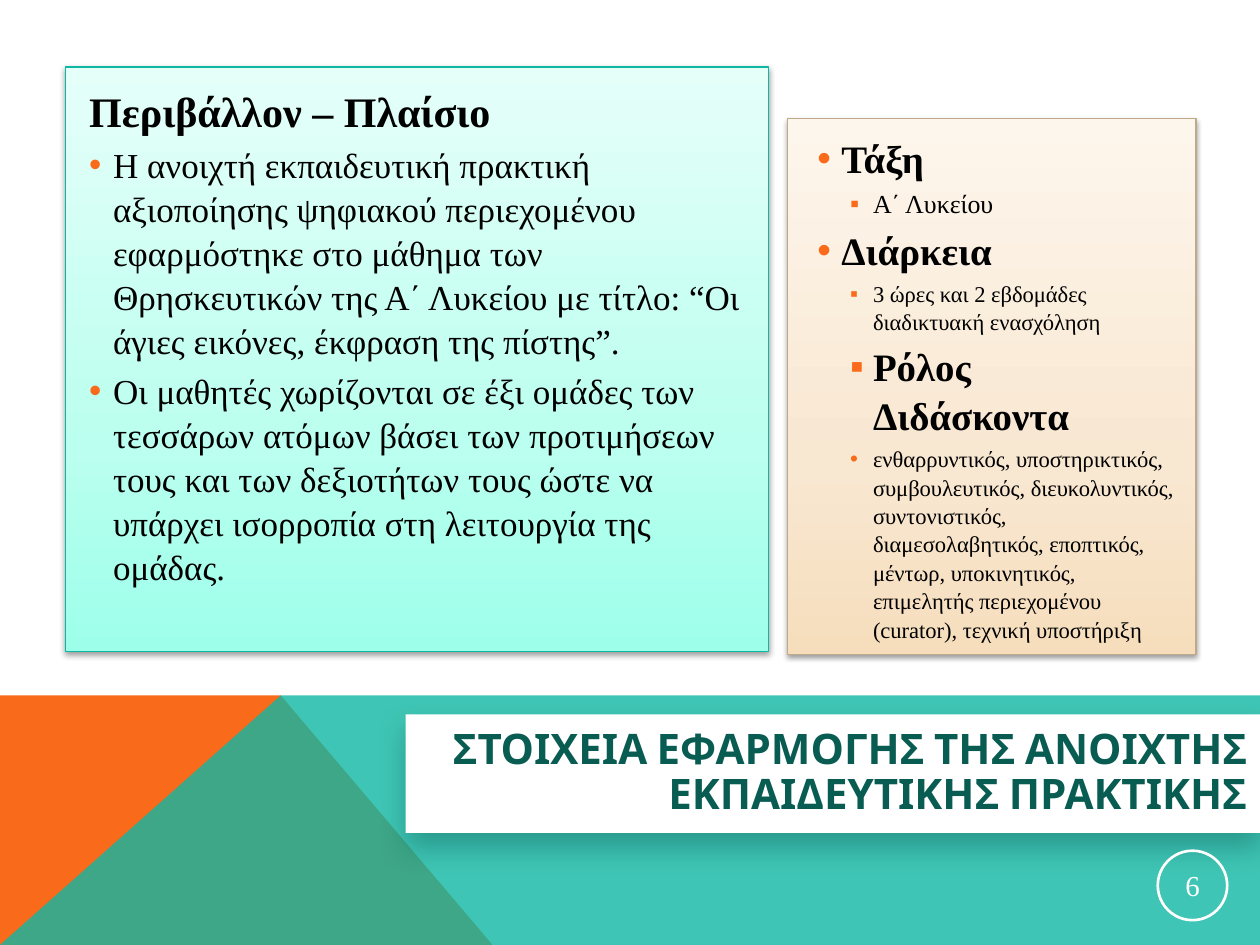
from lxml import etree
from pptx import Presentation
from pptx.dml.color import RGBColor
from pptx.enum.shapes import MSO_SHAPE
from pptx.enum.text import MSO_ANCHOR, PP_ALIGN
from pptx.oxml.ns import qn
from pptx.util import Cm, Pt

RECTANGLE, OVAL = MSO_SHAPE.RECTANGLE, MSO_SHAPE.OVAL
MIDDLE = MSO_ANCHOR.MIDDLE
CENTER, RIGHT = PP_ALIGN.CENTER, PP_ALIGN.RIGHT

# ---- content: (kind, text, size key) ----
TITLE = "ΣΤΟΙΧΕΙΑ ΕΦΑΡΜΟΓΗΣ ΤΗΣ ΑΝΟΙΧΤΗΣ ΕΚΠΑΙΔΕΥΤΙΚΗΣ ΠΡΑΚΤΙΚΗΣ"
PAGE_NUMBER = "6"
CONTEXT = [
    ("heading", "Περιβάλλον – Πλαίσιο", "heading"),
    ("point", "Η ανοιχτή εκπαιδευτική πρακτική αξιοποίησης ψηφιακού περιεχομένου "
     "εφαρμόστηκε στο μάθημα των Θρησκευτικών της Α΄ Λυκείου με τίτλο: "
     "“Οι άγιες εικόνες, έκφραση της πίστης”.", "body"),
    ("point", "Οι μαθητές χωρίζονται σε έξι ομάδες των τεσσάρων ατόμων βάσει των "
     "προτιμήσεων τους και των δεξιοτήτων τους ώστε να υπάρχει ισορροπία στη "
     "λειτουργία της ομάδας.", "body"),
]
DETAILS = [
    ("point", "Τάξη", "topic"),
    ("square", "Α΄ Λυκείου", "grade"),
    ("point", "Διάρκεια", "topic"),
    ("square", "3 ώρες και 2 εβδομάδες διαδικτυακή ενασχόληση", "detail"),
    ("square", "Ρόλος Διδάσκοντα", "topic"),
    ("subpoint", "ενθαρρυντικός, υποστηρικτικός, συμβουλευτικός, διευκολυντικός, "
     "συντονιστικός, διαμεσολαβητικός, εποπτικός, μέντωρ, υποκινητικός, "
     "επιμελητής περιεχομένου (curator), τεχνική υποστήριξη", "detail"),
]

# kind: (bullet, left margin cm, hanging indent cm)
LIST_STYLES = {
    "heading": (None, 0.96, 0.96),
    "point": ("•", 0.48, 0.48),
    "square": ("▪", 1.12, 0.46),
    "subpoint": ("•", 1.12, 0.46),
}

THEME = {
    "title_font": "Cabin", "body_font": "Times New Roman",
    "text": "000000", "title": "085C52", "white": "FFFFFF",
    "orange": "F96A1B", "teal": "10B7A3",
    "mint": [(0, "9DFFEA"), (35, "BAFFEF"), (100, "E5FFF9")], "mint_line": "0CB7A3",
    "sand": [(0, "F6DEBD"), (35, "F8E7D1"), (100, "FDF6EC")], "sand_line": "BFA989",
    "card_shadow": ("000000", 38, 3.1, 1.6), "title_shadow": ("085C52", 40, 16, 8),
    "sizes": {"title": 24, "heading": 24, "body": 20, "topic": 22.2,
              "grade": 14.8, "detail": 12.9, "number": 16.5},
}
BOLD_SIZES = {"heading", "topic"}

# ---- layout, in cm ----
WIDTH, HEIGHT = 25.4, 19.05
BAND_TOP, PEAK, FOOT = 14.02, 5.66, 9.93
ORANGE_OUTLINE = [(0, HEIGHT), (0, BAND_TOP), (PEAK, BAND_TOP), (FOOT, HEIGHT)]
TEAL_OUTLINE = [(0, HEIGHT), (PEAK, BAND_TOP), (WIDTH, BAND_TOP), (WIDTH, HEIGHT)]
# colours, outline colour, card box, text box, paragraphs
CARDS = [
    ("sand", "sand_line", (15.88, 2.39, 8.23, 10.8), (16.23, 2.54, 7.7, 10.31), DETAILS),
    ("mint", "mint_line", (1.32, 1.35, 14.17, 11.79), (1.55, 1.55, 13.77, 11.48), CONTEXT),
]
TITLE_BOX = (8.18, 14.4, 17.22, 2.39)
NUMBER_BOX = (23.34, 17.15, 1.4, 1.4)


def color(value):
    return RGBColor.from_string(value)


def add_child(parent, tag, **attributes):
    return etree.SubElement(parent, qn(tag), {k: str(v) for k, v in attributes.items()})


def add_band(shapes, outline, fill, opacity=100):
    points = [(Cm(x), Cm(y)) for x, y in outline]
    builder = shapes.build_freeform(*points[0])
    builder.add_line_segments(points[1:], close=True)
    band = builder.convert_to_shape()
    band.shadow.inherit = False
    band.fill.solid()
    band.fill.fore_color.rgb = color(fill)
    band.line.fill.background()
    if opacity < 100:
        rgb = band.element.spPr.find(qn("a:solidFill")).find(qn("a:srgbClr"))
        add_child(rgb, "a:alpha", val=opacity * 1000)


def add_plain_shape(shapes, preset, box):
    shape = shapes.add_shape(preset, *map(Cm, box))
    shape.shadow.inherit = False
    shape.fill.background()
    shape.line.fill.background()
    return shape


def set_outline(shape, value, width):
    shape.line.color.rgb = color(value)
    shape.line.width = Pt(width)


def set_shadow(shape, value, opacity, blur, distance):
    """Drop a shadow straight down; blur and distance are in points."""
    effects = shape.element.spPr.find(qn("a:effectLst"))
    outer = add_child(effects, "a:outerShdw", blurRad=Pt(blur), dist=Pt(distance),
                      dir=90 * 60000, algn="ctr", rotWithShape=0)
    add_child(add_child(outer, "a:srgbClr", val=value), "a:alpha", val=opacity * 1000)


def set_gradient(shape, stops):
    """Fill from bottom to top with (percent, colour) stops."""
    shape.fill.gradient()
    shape.fill.gradient_angle = 90
    stop_list = shape.element.spPr.find(qn("a:gradFill")).find(qn("a:gsLst"))
    for old_stop in list(stop_list):
        stop_list.remove(old_stop)
    for percent, value in stops:
        add_child(add_child(stop_list, "a:gs", pos=percent * 1000), "a:srgbClr", val=value)


def set_font(paragraph, name, size, value, bold):
    font = paragraph.font
    font.name, font.size, font.bold = name, Pt(THEME["sizes"][size]), bold
    font.color.rgb = color(value)


def set_bullet(paragraph, kind):
    bullet, margin, hanging = LIST_STYLES[kind]
    properties = paragraph._p.get_or_add_pPr()
    properties.set("marL", str(Cm(margin)))
    properties.set("indent", str(-Cm(hanging)))
    if bullet:
        add_child(add_child(properties, "a:buClr"), "a:srgbClr", val=THEME["orange"])
        add_child(properties, "a:buFont", typeface="Arial")
        add_child(properties, "a:buChar", char=bullet)


def add_list(shapes, box, items):
    frame = shapes.add_textbox(*map(Cm, box)).text_frame
    frame.word_wrap = True
    for index, (kind, text, size) in enumerate(items):
        paragraph = frame.add_paragraph() if index else frame.paragraphs[0]
        paragraph.text = text
        set_bullet(paragraph, kind)
        paragraph.line_spacing = 1.05
        if index:
            paragraph.space_before = Pt(3)
        set_font(paragraph, THEME["body_font"], size, THEME["text"], size in BOLD_SIZES)


def set_label(shape, text, alignment):
    frame = shape.text_frame
    frame.word_wrap = True
    frame.vertical_anchor = MIDDLE
    paragraph = frame.paragraphs[0]
    paragraph.text = text
    paragraph.alignment = alignment
    return paragraph


def add_title(shapes):
    panel = add_plain_shape(shapes, RECTANGLE, TITLE_BOX)
    panel.fill.solid()
    panel.fill.fore_color.rgb = color(THEME["white"])
    set_shadow(panel, *THEME["title_shadow"])
    paragraph = set_label(panel, TITLE, RIGHT)
    paragraph.line_spacing = 0.9
    set_font(paragraph, THEME["title_font"], "title", THEME["title"], True)


def add_page_number(shapes):
    ring = add_plain_shape(shapes, OVAL, NUMBER_BOX)
    set_outline(ring, THEME["white"], 1.5)
    frame = ring.text_frame
    frame.margin_left = frame.margin_right = frame.margin_top = frame.margin_bottom = Cm(0.03)
    paragraph = set_label(ring, PAGE_NUMBER, CENTER)
    set_font(paragraph, THEME["body_font"], "number", THEME["white"], False)


def main():
    presentation = Presentation()
    presentation.slide_width, presentation.slide_height = Cm(WIDTH), Cm(HEIGHT)
    shapes = presentation.slides.add_slide(presentation.slide_layouts[6]).shapes
    add_band(shapes, ORANGE_OUTLINE, THEME["orange"])
    add_band(shapes, TEAL_OUTLINE, THEME["teal"], opacity=80)
    for stops, outline, card_box, text_box, items in CARDS:
        card = add_plain_shape(shapes, RECTANGLE, card_box)
        set_gradient(card, THEME[stops])
        set_outline(card, THEME[outline], 0.75)
        set_shadow(card, *THEME["card_shadow"])
        add_list(shapes, text_box, items)
    add_title(shapes)
    add_page_number(shapes)
    presentation.save("out.pptx")


if __name__ == "__main__":
    main()
